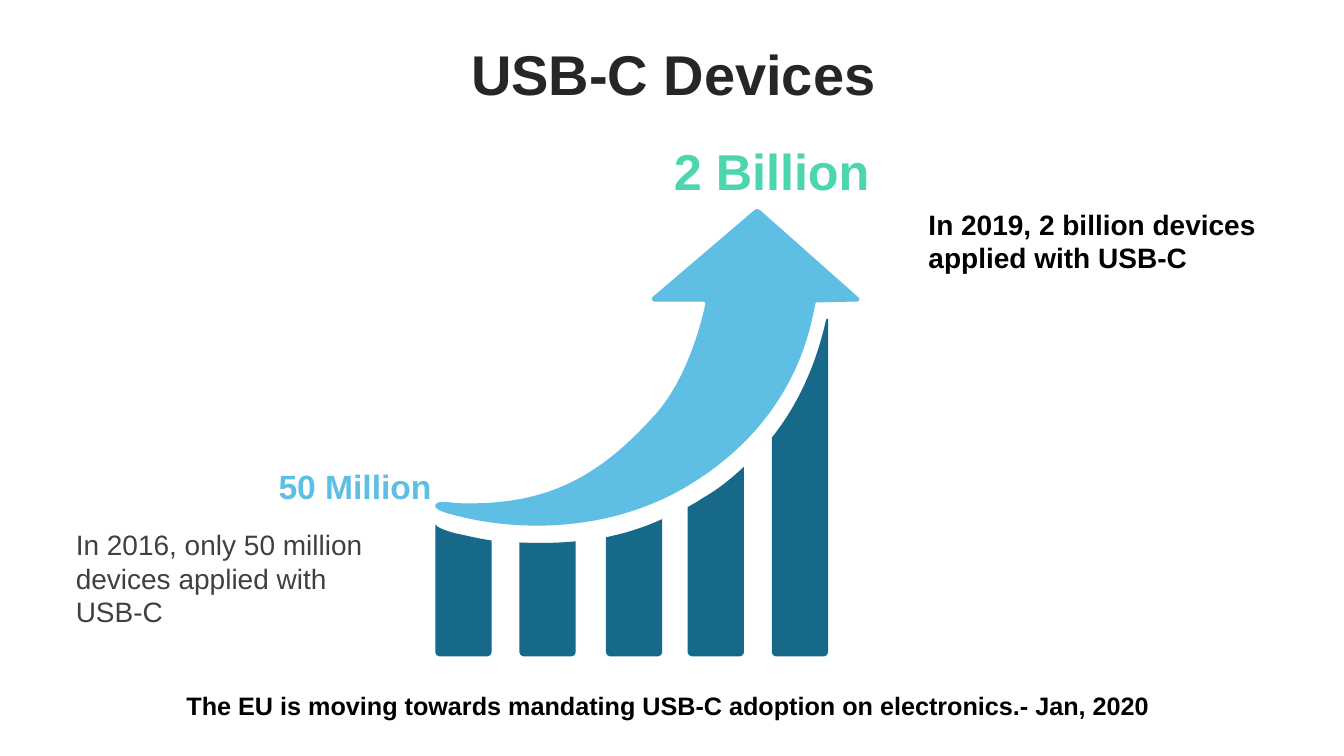
import pptx
import pptx.util
import pptx.dml.color
import pptx.enum.text
import pptx.oxml.ns
import pptx.oxml.xmlchemy

Cm = pptx.util.Cm
ALIGN = pptx.enum.text.PP_ALIGN
ANCHOR = pptx.enum.text.MSO_ANCHOR

SKY, TEAL, MINT = "5EBEE4", "17698A", "4CD6B0"
DARK, GREY, BLACK = "262626", "404040", "000000"

# Outlines in cm: a start point, then lines (one point) or curves (three)
ARROW = [
    [(5.51, 2.34)], [(6.76, 2.34)],
    [(6.78, 2.34), (6.81, 2.36), (6.81, 2.39)],
    [(6.73, 2.74), (6.38, 4.32), (5.46, 5.28)],
    [(4.06, 6.81), (2.74, 7.49), (0.58, 7.42)],
    [(0.41, 7.42), (0.05, 7.32), (0, 7.47)],
    [(-0.03, 7.59), (0.28, 7.67), (0.48, 7.72)],
    [(1.88, 8.1), (4.37, 8.26), (6.53, 6.88)],
    [(9.17, 5.21), (9.47, 2.87), (9.58, 2.39)],
    [(9.58, 2.36), (9.6, 2.36), (9.63, 2.36)],
    [(9.93, 2.36), (10.41, 2.34), (10.64, 2.34)],
    [(10.69, 2.34), (10.72, 2.26), (10.67, 2.24)],
    [(8.18, 0.03)],
    [(8.13, 0), (8.08, 0), (8.05, 0.03)],
    [(5.46, 2.24)],
    [(5.44, 2.26), (5.46, 2.34), (5.51, 2.34)],
]

# Left edge of each bar and its curved top, measured from that edge
BARS = [
    (0, [[(0, 7.95)], [(0.05, 8.05), (0.33, 8.13), (0.51, 8.18)],
         [(0.76, 8.23), (1.07, 8.31), (1.42, 8.36)]]),
    (2.12, [[(0, 8.41)], [(0.46, 8.43), (0.94, 8.43), (1.42, 8.38)]]),
    (4.3, [[(0, 8.28)], [(0.48, 8.18), (0.97, 8.03), (1.42, 7.82)]]),
    (6.36, [[(0, 7.52)], [(0.13, 7.44), (0.25, 7.39), (0.38, 7.29)],
            [(0.79, 7.06), (1.12, 6.78), (1.42, 6.5)]]),
    (8.48, [[(0, 5.77)], [(0.86, 4.7), (1.22, 3.48), (1.37, 2.79)],
            [(1.42, 2.77)]]),
]
WIDTH, BASE, ROUND = 1.42, 11.28, 0.1


def color(code):
    return pptx.dml.color.RGBColor.from_string(code)


def style(item, values):
    for name, value in values.items():
        setattr(item, name, value)


def write(shape, text, size, code, bold=True, align=ALIGN.LEFT,
          anchor=ANCHOR.TOP, space=1.0):
    frame = shape.text_frame
    frame.text = text
    style(frame, {"word_wrap": True, "vertical_anchor": anchor,
                  "auto_size": pptx.enum.text.MSO_AUTO_SIZE.NONE})
    para = frame.paragraphs[0]
    style(para, {"alignment": align, "line_spacing": space})
    style(para.font, {"name": "Arial", "size": pptx.util.Pt(size),
                      "bold": bold})
    para.font.color.rgb = color(code)


def label(slide, box, text, size, code, **form):
    shape = slide.shapes.add_textbox(*map(Cm, box))
    write(shape, text, size, code, **form)


def bend(shape, parts):
    """Swap straight sides for cubic curves where a part has three points."""
    qn = pptx.oxml.ns.qn
    route = shape.element.find(".//" + qn("a:path"))
    for part, side in zip(parts[1:], route.findall(qn("a:lnTo"))):
        if len(part) == 1:
            continue
        curve = pptx.oxml.xmlchemy.OxmlElement("a:cubicBezTo")
        for x, y in part:
            point = pptx.oxml.xmlchemy.OxmlElement("a:pt")
            point.set("x", str(x - shape.left))
            point.set("y", str(y - shape.top))
            curve.append(point)
        route.replace(side, curve)


def draw(slide, left, top, outline, code):
    parts = [[(Cm(left + x), Cm(top + y)) for x, y in part]
             for part in outline]
    ends = [part[-1] for part in parts]
    build = slide.shapes.build_freeform(*ends[0], scale=1.0)
    build.add_line_segments(ends[1:], close=True)
    shape = build.convert_to_shape()
    bend(shape, parts)
    shape.shadow.inherit = False
    shape.fill.solid()
    shape.fill.fore_color.rgb = color(code)
    shape.line.fill.background()


def head(slide, box):
    title = slide.shapes.title
    style(title, dict(zip(("left", "top", "width", "height"), map(Cm, box))))
    write(title, "USB-C Devices", 40, DARK, align=ALIGN.CENTER,
          anchor=ANCHOR.MIDDLE, space=0.9)


def growth(slide, left, top):
    # Arrow rising over the bars
    draw(slide, left, top, ARROW, SKY)
    # Bars with rounded feet
    near, low = WIDTH - ROUND, BASE - ROUND
    foot = [[(WIDTH, low)],
            [(WIDTH, BASE - 0.05), (WIDTH - 0.05, BASE), (near, BASE)],
            [(ROUND, BASE)],
            [(0.05, BASE), (0, BASE - 0.05), (0, low)]]
    for edge, crest in BARS:
        draw(slide, left + edge, top, crest + foot, TEAL)


def start(slide, left, top):
    # First year: figure and note
    label(slide, (left + 5.11, top, 4.78, 1.27), "50 Million", 24, SKY,
          anchor=ANCHOR.MIDDLE)
    label(slide, (left, top + 1.55, 8.18, 2.82),
          "In 2016, only 50 million devices applied with USB-C",
          20, GREY, bold=False)


def finish(slide, left, top):
    # Last year: figure and note
    label(slide, (left, top, 5.56, 1.8), "2 Billion", 36, MINT,
          align=ALIGN.CENTER, anchor=ANCHOR.MIDDLE)
    label(slide, (left + 6.48, top + 1.7, 9.09, 1.96),
          "In 2019, 2 billion devices applied with USB-C", 20, BLACK)


def main():
    deck = pptx.Presentation()
    style(deck, {"slide_width": Cm(33.87), "slide_height": Cm(19.05)})
    slide = deck.slides.add_slide(deck.slide_layouts[5])
    head(slide, (0.89, 0.94, 32.16, 2.01))
    growth(slide, 10.97, 5.26)
    start(slide, 1.66, 11.62)
    finish(slide, 16.67, 3.4)
    # Closing line
    label(slide, (4.45, 17.26, 25.2, 1.02),
          "The EU is moving towards mandating USB-C adoption on "
          "electronics.- Jan, 2020", 18, BLACK)
    deck.save("out.pptx")


if __name__ == "__main__":
    main()
